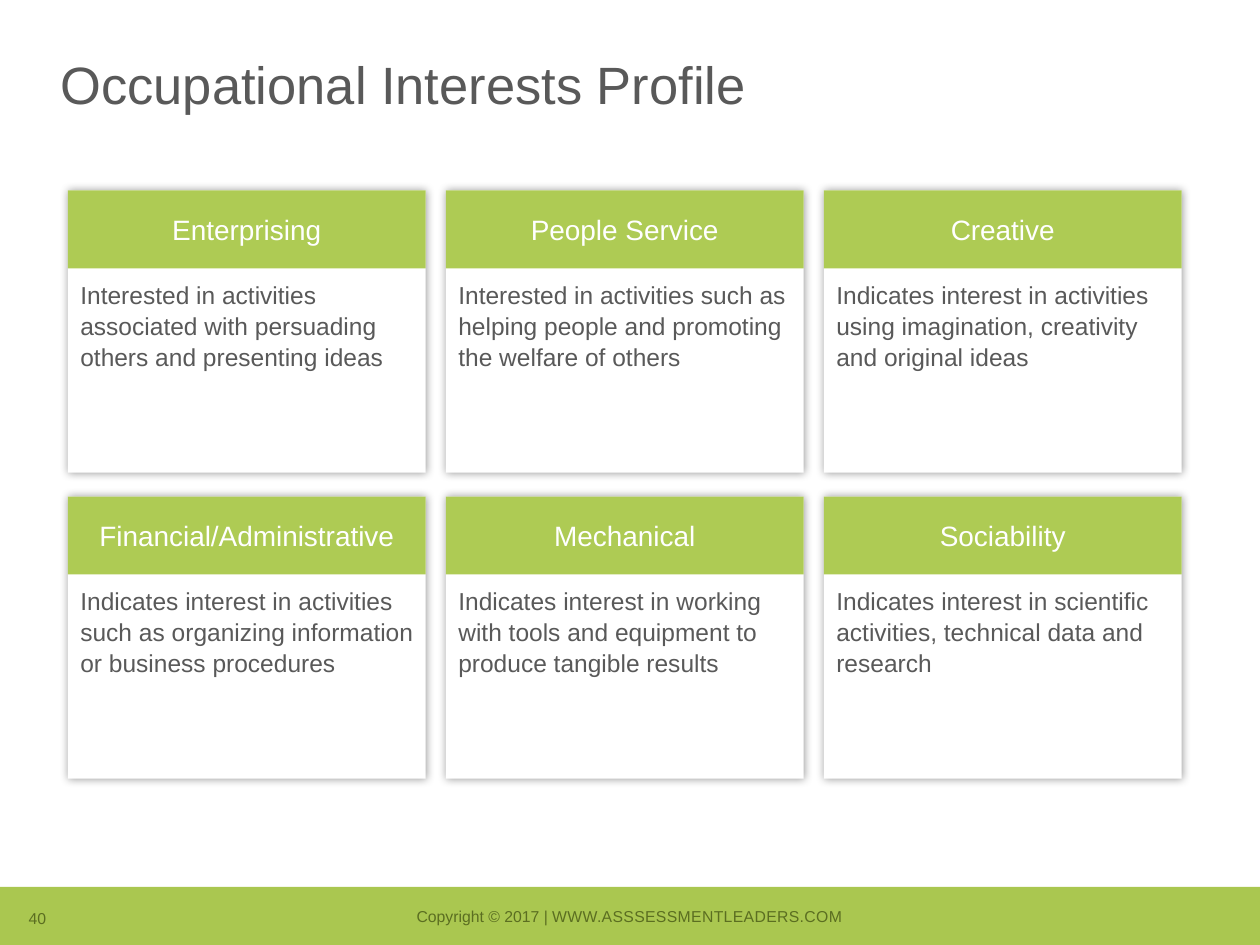
from lxml.etree import SubElement
from pptx import Presentation
from pptx.dml.color import RGBColor
from pptx.enum.shapes import MSO_SHAPE as Shape
from pptx.enum.text import MSO_ANCHOR as Anchor, MSO_AUTO_SIZE as AutoSize, PP_ALIGN as Align
from pptx.oxml.ns import qn
from pptx.util import Cm, Pt

TITLE = "Occupational Interests Profile"
INTEREST_ROWS = [
    [
        ("Enterprising", "Interested in activities associated with persuading others and presenting ideas"),
        ("People Service", "Interested in activities such as helping people and promoting the welfare of others"),
        ("Creative", "Indicates interest in activities using imagination, creativity and original ideas"),
    ],
    [
        ("Financial/Administrative",
         "Indicates interest in activities such as organizing information or business procedures"),
        ("Mechanical", "Indicates interest in working with tools and equipment to produce tangible results"),
        ("Sociability", "Indicates interest in scientific activities, technical data and research"),
    ],
]
COPYRIGHT = ["Copyright © 2017 | ", "WWW.ASSSESSMENTLEADERS.COM"]
PAGE_NUMBER = "40"

THEME = {
    "font": "Arial",
    "text": RGBColor.from_string("595959"),
    "header": RGBColor.from_string("AECB54"),
    "band": RGBColor.from_string("AAC750"),
    "footer": RGBColor.from_string("5B6E21"),
    "white": RGBColor.from_string("FFFFFF"),
    "title_size": Pt(30),
    "header_size": Pt(16),
    "body_size": Pt(14),
    "footer_size": Pt(9),
}

SLIDE_W, SLIDE_H = 25.4, 19.05
GRID_LEFT, GRID_TOP = 1.37, 3.84
COLUMN_STEP, ROW_STEP = 7.62, 6.17
CARD_W, CARD_H, HEADER_H = 7.21, 5.69, 1.57
BAND_H = 1.17


def set_font(paragraph, size, color):
    paragraph.font.name = THEME["font"]
    paragraph.font.size = THEME[size]
    paragraph.font.color.rgb = THEME[color]


def add_rect(shapes, left, top, width, height, fill):
    rect = shapes.add_shape(Shape.RECTANGLE, Cm(left), Cm(top), Cm(width), Cm(height))
    rect.shadow.inherit = False
    rect.fill.solid()
    rect.fill.fore_color.rgb = THEME[fill]
    rect.line.fill.background()
    return rect


def add_glow_shadow(shape):
    """Give the shape a soft black shadow, even on all sides."""
    effects = shape._element.spPr.find(qn("a:effectLst"))
    shadow = SubElement(effects, qn("a:outerShdw"), blurRad=str(Pt(5)), dist="0", dir="0",
                        algn="ctr", rotWithShape="0")
    black = SubElement(shadow, qn("a:srgbClr"), val="000000")
    SubElement(black, qn("a:alpha"), val="40000")


def write(shape, text, size, color, align, anchor, insets):
    frame = shape.text_frame
    frame.word_wrap = True
    frame.vertical_anchor = anchor
    (frame.margin_left, frame.margin_top,
     frame.margin_right, frame.margin_bottom) = map(Cm, insets)
    paragraph = frame.paragraphs[0]
    paragraph.text = text
    paragraph.alignment = align
    set_font(paragraph, size, color)
    return paragraph


def add_card_row(slide, top, interests):
    row = slide.shapes.add_group_shape().shapes
    lefts = [GRID_LEFT + column * COLUMN_STEP for column in range(len(interests))]
    for left, (_, description) in zip(lefts, interests):
        card = add_rect(row, left, top, CARD_W, CARD_H, "white")
        add_glow_shadow(card)
        body = write(card, description, "body_size", "text", Align.LEFT, Anchor.TOP,
                     (0.25, 1.78, 0, 0.13))
        body.line_spacing = 1.05
    for left, (interest, _) in zip(lefts, interests):
        header = add_rect(row, left, top, CARD_W, HEADER_H, "header")
        write(header, interest, "header_size", "white", Align.CENTER, Anchor.MIDDLE,
              (0, 0.13, 0, 0.13))


def add_footer_text(slide, left, top, width, parts, align):
    box = slide.shapes.add_textbox(Cm(left), Cm(top), Cm(width), Cm(0.64))
    frame = box.text_frame
    frame.word_wrap = False
    frame.auto_size = AutoSize.SHAPE_TO_FIT_TEXT
    frame.vertical_anchor = Anchor.BOTTOM
    paragraph = frame.paragraphs[0]
    paragraph.alignment = align
    for part in parts:
        paragraph.add_run().text = part
    set_font(paragraph, "footer_size", "footer")
    return paragraph


def add_footer(slide):
    add_rect(slide.shapes, 0, SLIDE_H - BAND_H, SLIDE_W, BAND_H, "band")
    notice = add_footer_text(slide, 8.05, 18.14, 9.27, COPYRIGHT, Align.CENTER)
    notice.runs[-1]._r.get_or_add_rPr().set("spc", "20")
    add_footer_text(slide, 0.33, 18.19, 0.91, [PAGE_NUMBER], Align.LEFT)


def add_title(slide):
    title = slide.shapes.title
    title.left, title.top, title.width, title.height = Cm(0.97), Cm(1.07), Cm(23.5), Cm(2.11)
    heading = write(title, TITLE, "title_size", "text", Align.LEFT, Anchor.TOP,
                    (0.25, 0.13, 0.25, 0.13))
    heading.line_spacing = 0.9


def main():
    deck = Presentation()
    deck.slide_width, deck.slide_height = Cm(SLIDE_W), Cm(SLIDE_H)
    slide = deck.slides.add_slide(deck.slide_layouts[5])
    add_footer(slide)
    add_title(slide)
    for index, interests in enumerate(INTEREST_ROWS):
        add_card_row(slide, GRID_TOP + index * ROW_STEP, interests)
    deck.save("out.pptx")


if __name__ == "__main__":
    main()
